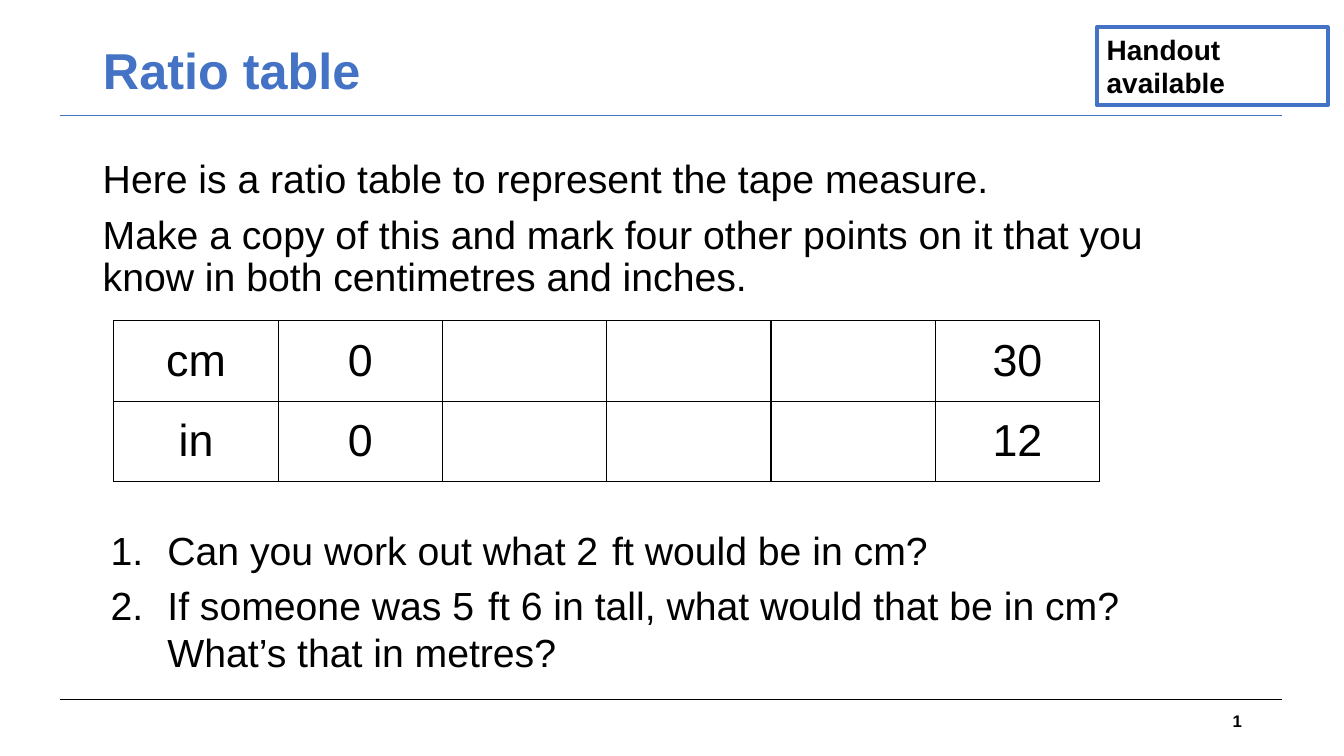
from dataclasses import dataclass

from lxml import etree
from pptx import Presentation
from pptx.dml.color import RGBColor
from pptx.enum import shapes, text
from pptx.oxml import ns
from pptx.util import Cm, Pt

FONT = "Arial"
BLUE, BLACK = "4472C4", "000000"
LEFT, CENTER, RIGHT = text.PP_ALIGN.LEFT, text.PP_ALIGN.CENTER, text.PP_ALIGN.RIGHT
TOP, MIDDLE = text.MSO_ANCHOR.TOP, text.MSO_ANCHOR.MIDDLE


@dataclass
class Box:
    left: float
    top: float
    width: float
    height: float

    def lengths(self) -> list:
        return [Cm(v) for v in (self.left, self.top, self.width, self.height)]


@dataclass
class Rule:
    y: float
    color: str


RULES = [Rule(17.63, BLACK), Rule(2.9, BLUE)]
INTRO = [
    "Here is a ratio table to represent the tape measure.",
    "Make a copy of this and mark four other points on it that you "
    "know in both centimetres and inches.",
]
RATIOS = [["cm", "0", "", "", "", "30"], ["in", "0", "", "", "", "12"]]
# Each question is split where a narrow space precedes its unit
QUESTIONS = [
    ("Can you work out what 2 ", "ft would be in cm?"),
    ("If someone was 5 ",
     "ft 6 in tall, what would that be in cm? What’s that in metres?"),
]


def rgb(color: str) -> RGBColor:
    return RGBColor.from_string(color)


def add_run(p, content: str, size: float, color: str = BLACK, bold: bool = False):
    r = p.add_run()
    r.text = content
    r.font.name, r.font.size, r.font.bold = FONT, Pt(size), bold
    r.font.color.rgb = rgb(color)
    return r


def write(tf, content: str, size: float, *, color: str = BLACK, bold: bool = False,
          align=LEFT, anchor=TOP, first: bool = True, line_spacing=None, before=None):
    tf.word_wrap, tf.vertical_anchor = True, anchor
    p = tf.paragraphs[0] if first else tf.add_paragraph()
    p.alignment, p.line_spacing = align, line_spacing
    if before is not None:
        p.space_before = Pt(before)
    for i, line in enumerate(content.split("\n")):
        if i:
            p.add_line_break()
        add_run(p, line, size, color, bold)
    return p


def add_rule(s, rule: Rule) -> None:
    c = s.shapes.add_connector(shapes.MSO_CONNECTOR.STRAIGHT,
                               Cm(1.5), Cm(rule.y), Cm(32.3), Cm(rule.y))
    c.line.color.rgb, c.line.width = rgb(rule.color), Pt(0.75)
    etree.SubElement(c._element.spPr, ns.qn("a:effectLst"))


def add_number(s, box: Box) -> None:
    tf = s.shapes.add_textbox(*box.lengths()).text_frame
    p = write(tf, "3", 12, bold=True, align=RIGHT, anchor=MIDDLE)
    r = p.runs[0]._r
    fld = etree.Element(ns.qn("a:fld"), type="slidenum",
                        id="{B6F15528-21DE-4FAA-801E-634DDDAF4B2B}")
    r.addprevious(fld)
    fld.extend(list(r))
    p._p.remove(r)


def set_borders(cell, color: str, width: float) -> None:
    tcPr = cell._tc.get_or_add_tcPr()
    for i, side in enumerate(("lnL", "lnR", "lnT", "lnB")):
        ln = etree.Element(ns.qn(f"a:{side}"), w=str(Pt(width)))
        fill = etree.SubElement(ln, ns.qn("a:solidFill"))
        etree.SubElement(fill, ns.qn("a:srgbClr"), val=color)
        tcPr.insert(i, ln)


def add_ratio_table(s, box: Box) -> None:
    table = s.shapes.add_table(len(RATIOS), len(RATIOS[0]), *box.lengths()).table
    table.first_row = table.horz_banding = False
    for i, row in enumerate(RATIOS):
        for j, value in enumerate(row):
            cell = table.cell(i, j)
            cell.fill.background()
            cell.vertical_anchor = MIDDLE
            set_borders(cell, BLACK, 1)
            p = cell.text_frame.paragraphs[0]
            p.alignment = CENTER
            if value:
                add_run(p, value, 32)


def add_questions(s, box: Box) -> None:
    tf = s.shapes.add_textbox(*box.lengths()).text_frame
    for i, (start, end) in enumerate(QUESTIONS):
        p = write(tf, start, 28, first=i == 0)
        add_run(p, " ", 8)
        add_run(p, end, 28)
        p.space_after = Pt(6)
        pPr = p._p.get_or_add_pPr()
        pPr.set("marL", str(Cm(1.43)))
        pPr.set("indent", str(-Cm(1.43)))
        etree.SubElement(pPr, ns.qn("a:buFont"), typeface="+mj-lt")
        etree.SubElement(pPr, ns.qn("a:buAutoNum"), type="arabicPeriod")


def main() -> None:
    prs = Presentation()
    prs.slide_width, prs.slide_height = Cm(33.87), Cm(19.05)
    s = prs.slides.add_slide(prs.slide_layouts[5])

    # Rules and slide number
    for rule in RULES:
        add_rule(s, rule)
    add_number(s, Box(23.93, 17.65, 7.62, 1.02))

    # Title
    title = s.shapes.title
    title.left, title.top, title.width, title.height = Box(2.34, 1.02, 29.21, 3.68).lengths()
    write(title.text_frame, "Ratio table", 36, color=BLUE, bold=True, line_spacing=0.9)

    # Handout label
    label = s.shapes.add_shape(shapes.MSO_SHAPE.RECTANGLE,
                               *Box(27.64, 0.69, 5.82, 1.96).lengths())
    label.shadow.inherit = False
    label.fill.background()
    label.line.color.rgb, label.line.width = rgb(BLUE), Pt(3)
    write(label.text_frame, "Handout\navailable", 20, bold=True)

    # Introduction
    tf = s.shapes.add_textbox(*Box(2.34, 3.89, 29.21, 4.45).lengths()).text_frame
    for i, line in enumerate(INTRO):
        write(tf, line, 28, first=i == 0, line_spacing=0.9, before=10)

    # Table and questions
    add_ratio_table(s, Box(2.87, 8.08, 24.84, 4.06))
    add_questions(s, Box(2.54, 13.13, 26.67, 4.06))

    prs.save("out.pptx")


if __name__ == "__main__":
    main()
